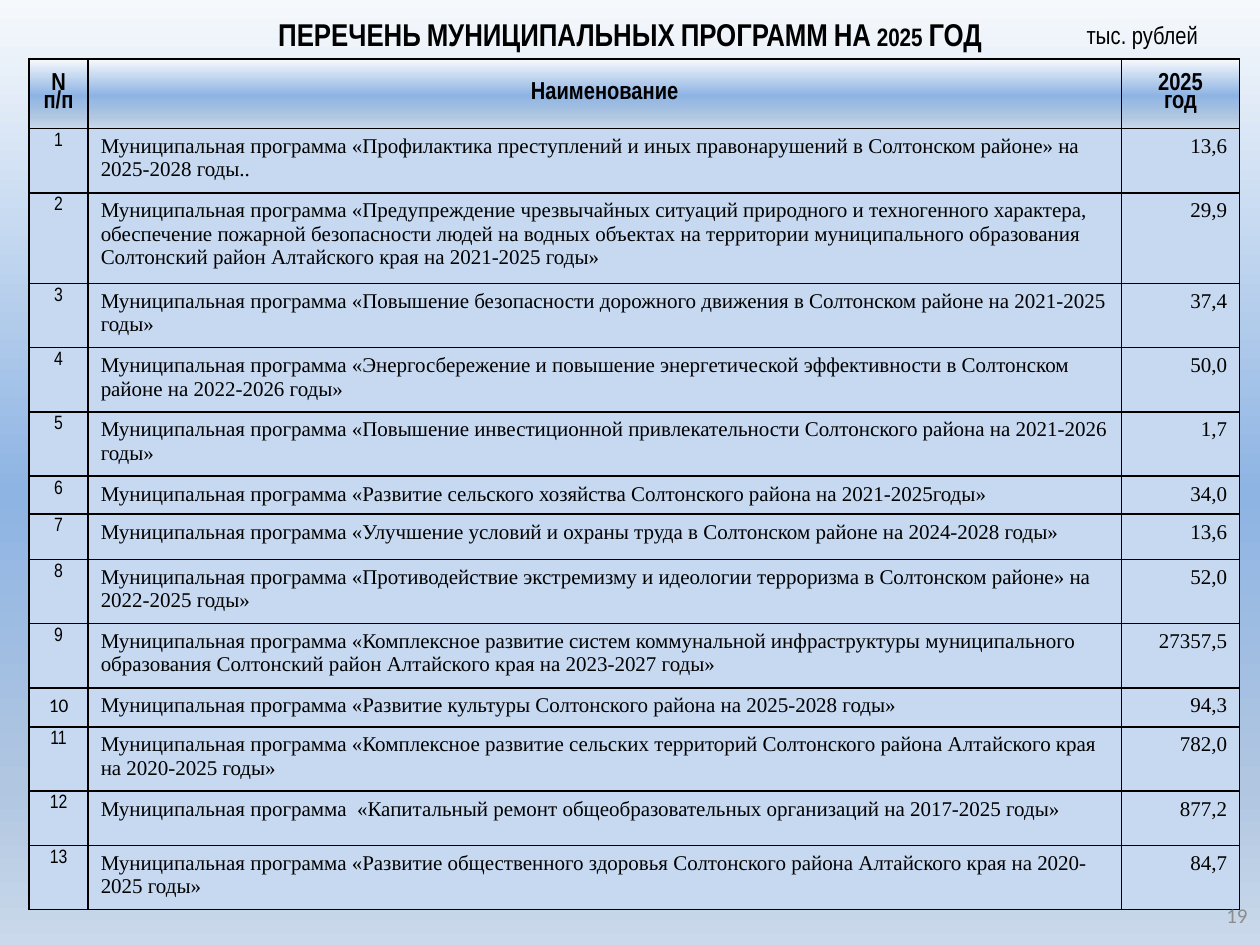
import pptx
import pptx.dml.color
import pptx.enum.text
import pptx.oxml
import pptx.oxml.ns
import pptx.util

ALIGN = pptx.enum.text.PP_ALIGN
ANCHOR = pptx.enum.text.MSO_ANCHOR
NARROW, SERIF, SANS = "Arial Narrow", "Times New Roman", "Calibri"
BLACK, GREY, PALE_BLUE = "000000", "8C8C8C", "C6D9F1"
GRADIENT = [(0, "F6F9FC"), (52, "8EB4E3"), (83, "B0C6E1"), (100, "CAD9EB")]

COLUMN_WIDTHS = [0.47, 8.2, 0.94]
HEADER_HEIGHT = 0.55
HEADERS = ["N п/п", "Наименование", "2025\nгод"]
# Row height, name after the common opening words, amount
PROGRAMS = [
    (0.51, "«Профилактика преступлений и иных правонарушений в Солтонском районе» "
           "на 2025-2028 годы..", "13,6"),
    (0.72, "«Предупреждение чрезвычайных ситуаций природного и техногенного характера, "
           "обеспечение пожарной безопасности людей на водных объектах на территории "
           "муниципального образования Солтонский район Алтайского края "
           "на 2021-2025 годы»", "29,9"),
    (0.51, "«Повышение безопасности дорожного движения в Солтонском районе "
           "на 2021-2025 годы»", "37,4"),
    (0.51, "«Энергосбережение и повышение энергетической эффективности в Солтонском "
           "районе на 2022-2026 годы»", "50,0"),
    (0.51, "«Повышение инвестиционной привлекательности Солтонского района "
           "на 2021-2026 годы»", "1,7"),
    (0.27, "«Развитие сельского хозяйства Солтонского района на 2021-2025годы»", "34,0"),
    (0.36, "«Улучшение условий и охраны труда в Солтонском районе "
           "на 2024-2028 годы»", "13,6"),
    (0.51, "«Противодействие экстремизму и идеологии терроризма в Солтонском районе» "
           "на 2022-2025 годы»", "52,0"),
    (0.51, "«Комплексное развитие систем коммунальной инфраструктуры муниципального "
           "образования Солтонский район Алтайского края на 2023-2027 годы»", "27357,5"),
    (0.31, "«Развитие культуры Солтонского района на 2025-2028 годы»", "94,3"),
    (0.51, "«Комплексное развитие сельских территорий Солтонского района Алтайского "
           "края на 2020-2025 годы»", "782,0"),
    (0.43, " «Капитальный ремонт общеобразовательных организаций "
           "на 2017-2025 годы»", "877,2"),
    (0.51, "«Развитие общественного здоровья Солтонского района Алтайского края "
           "на 2020-2025 годы»", "84,7"),
]


def rgb(value):
    return pptx.dml.color.RGBColor.from_string(value)


def write_text(frame, text, size=12, font=SERIF, color=BLACK, bold=False,
               align=ALIGN.LEFT, spacing=1.0, small_caps=False):
    """Fill a text frame, one paragraph for each line of text."""
    frame.word_wrap = True
    frame.text = text
    for paragraph in frame.paragraphs:
        paragraph.alignment = align
        paragraph.line_spacing = spacing
        for run in paragraph.runs:
            run.font.size = pptx.util.Pt(size)
            run.font.name = font
            run.font.bold = bold
            run.font.color.rgb = rgb(color)
            if small_caps:
                run.font._element.set("cap", "small")


def fill_gradient(fill, owner):
    """Give the fill the shared gradient; owner is the XML element that holds it."""
    fill.gradient()
    fill.gradient_angle = 270
    stops = owner.find(".//" + pptx.oxml.ns.qn("a:gsLst"))
    for stop in list(stops):
        stops.remove(stop)
    for position, color in GRADIENT:
        stops.append(pptx.oxml.parse_xml(
            f'<a:gs {pptx.oxml.ns.nsdecls("a")} pos="{position * 1000}">'
            f'<a:srgbClr val="{color}"/></a:gs>'))


def add_borders(cell, color=BLACK, width=1):
    properties = cell._tc.get_or_add_tcPr()
    for index, side in enumerate(["lnL", "lnR", "lnT", "lnB"]):
        properties.insert(index, pptx.oxml.parse_xml(
            f'<a:{side} {pptx.oxml.ns.nsdecls("a")} w="{pptx.util.Pt(width)}">'
            f'<a:solidFill><a:srgbClr val="{color}"/></a:solidFill></a:{side}>'))


class Deck:
    def __init__(self, width, height):
        self.presentation = pptx.Presentation()
        self.presentation.slide_width = pptx.util.Inches(width)
        self.presentation.slide_height = pptx.util.Inches(height)
        self.slide = None

    def add_slide(self):
        self.slide = self.presentation.slides.add_slide(self.presentation.slide_layouts[6])
        fill_gradient(self.slide.background.fill, self.slide.element)

    def place(self, left, top, width, height):
        """Turn shares of the slide's size into lengths."""
        across, down = self.presentation.slide_width, self.presentation.slide_height
        return [round(share * side) for share, side in
                zip((left, top, width, height), (across, down, across, down))]

    def add_text(self, place, text, **text_format):
        shape = self.slide.shapes.add_textbox(*self.place(*place))
        shape.text_frame.vertical_anchor = ANCHOR.MIDDLE
        write_text(shape.text_frame, text, **text_format)

    def add_table(self, place, column_widths, row_heights):
        table = self.slide.shapes.add_table(
            len(row_heights), len(column_widths), *self.place(*place)).table
        for column, width in zip(table.columns, column_widths):
            column.width = pptx.util.Inches(width)
        for row, height in zip(table.rows, row_heights):
            row.height = pptx.util.Inches(height)
        return table

    def write_cell(self, cell, text, header=False, **text_format):
        if header:
            cell.vertical_anchor = ANCHOR.MIDDLE
            fill_gradient(cell.fill, cell._tc)
        else:
            cell.fill.solid()
            cell.fill.fore_color.rgb = rgb(PALE_BLUE)
        add_borders(cell)
        write_text(cell.text_frame, text, **text_format)

    def add_program_table(self, place):
        heights = [HEADER_HEIGHT] + [height for height, _, _ in PROGRAMS]
        table = self.add_table(place, COLUMN_WIDTHS, heights)
        for column, header in enumerate(HEADERS):
            self.write_cell(table.cell(0, column), header, header=True, size=14,
                            font=NARROW, bold=True, align=ALIGN.CENTER, spacing=0.8)
        for number, (_, name, amount) in enumerate(PROGRAMS, start=1):
            font, spacing = (SANS, 1.0) if number == 10 else (NARROW, 0.8)
            self.write_cell(table.cell(number, 0), str(number), size=11, font=font,
                            align=ALIGN.CENTER, spacing=spacing)
            self.write_cell(table.cell(number, 1), "Муниципальная программа " + name)
            self.write_cell(table.cell(number, 2), amount, align=ALIGN.RIGHT)


def main():
    deck = Deck(10, 7.5)
    deck.add_slide()
    deck.add_text((0, 0.01, 1, 0.06), "ПЕРЕЧЕНЬ МУНИЦИПАЛЬНЫХ ПРОГРАММ НА 2025 ГОД",
                  size=18, font=NARROW, bold=True, align=ALIGN.CENTER,
                  spacing=0.8, small_caps=True)
    deck.add_program_table((0.023, 0.0627, 0.961, 0.9))
    deck.add_text((0.844, 0, 0.125, 0.073), "тыс. рублей", size=14, font=NARROW,
                  align=ALIGN.CENTER)
    deck.add_text((0.766, 0.944, 0.234, 0.048), "19", font=SANS, color=GREY,
                  align=ALIGN.RIGHT)
    deck.presentation.save("out.pptx")


if __name__ == "__main__":
    main()
